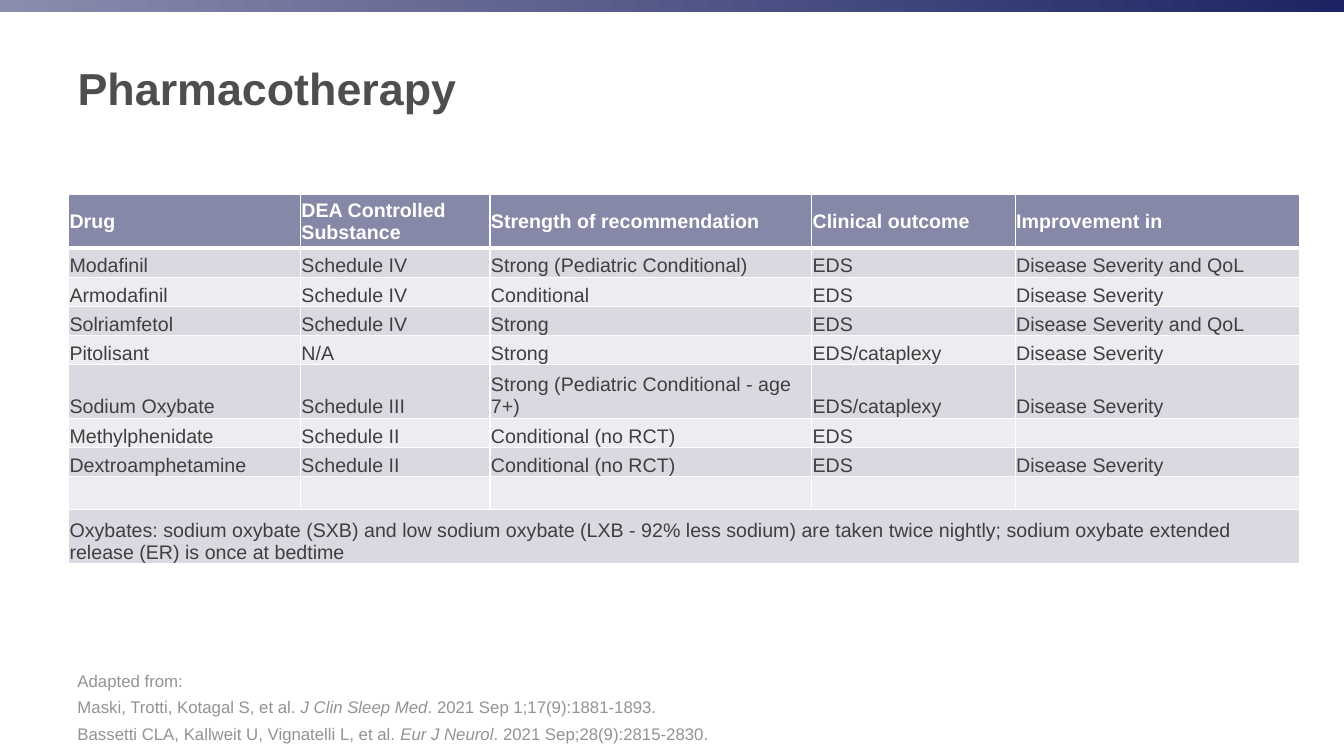
from lxml import etree
from pptx import Presentation
from pptx.dml.color import RGBColor
from pptx.enum.shapes import MSO_SHAPE
from pptx.enum.text import MSO_ANCHOR, PP_ALIGN
from pptx.oxml.ns import qn
from pptx.util import Inches, Pt

RECTANGLE = MSO_SHAPE.RECTANGLE
MIDDLE, BOTTOM = MSO_ANCHOR.MIDDLE, MSO_ANCHOR.BOTTOM
LEFT = PP_ALIGN.LEFT

WIDTH, HEIGHT = Inches(13.33), Inches(7.5)
MARGIN, TEXT_WIDTH = Inches(0.67), Inches(11.75)
COLUMN_WIDTHS = [2.3, 1.88, 3.19, 2.02, 2.82]
SINGLE, DOUBLE, SPACER = 0.29, 0.53, 0.33
ROW_HEIGHTS = [DOUBLE] + [SINGLE] * 4 + [DOUBLE] + [SINGLE] * 2 + [SPACER, DOUBLE]
BODY_SIZE = 14

DRUGS = [
    ["Drug", "DEA Controlled Substance", "Strength of recommendation",
     "Clinical outcome", "Improvement in"],
    ["Modafinil", "Schedule IV", "Strong (Pediatric Conditional)", "EDS",
     "Disease Severity and QoL"],
    ["Armodafinil", "Schedule IV", "Conditional", "EDS", "Disease Severity"],
    ["Solriamfetol", "Schedule IV", "Strong", "EDS", "Disease Severity and QoL"],
    ["Pitolisant", "N/A", "Strong", "EDS/cataplexy", "Disease Severity"],
    ["Sodium Oxybate", "Schedule III", "Strong (Pediatric Conditional - age 7+)",
     "EDS/cataplexy", "Disease Severity"],
    ["Methylphenidate", "Schedule II", "Conditional (no RCT)", "EDS", ""],
    ["Dextroamphetamine", "Schedule II", "Conditional (no RCT)", "EDS",
     "Disease Severity"],
    [""] * 5,
    ["Oxybates: sodium oxybate (SXB) and low sodium oxybate (LXB - 92% less sodium) "
     "are taken twice nightly; sodium oxybate extended release (ER) is once at bedtime",
     "", "", "", ""],
]
CITATIONS = [
    ["Adapted from:"],
    ["Maski, Trotti, Kotagal S, et al. ", "J Clin Sleep Med",
     ". 2021 Sep 1;17(9):1881-1893."],
    ["Bassetti CLA, Kallweit U, Vignatelli L, et al. ", "Eur J Neurol",
     ". 2021 Sep;28(9):2815-2830."],
]


def color(value):
    return RGBColor.from_string(value)


def add_text(paragraph, text, size, ink, **styles):
    run = paragraph.add_run()
    run.text = text
    run.font.color.rgb = color(ink)
    for key, value in {"name": "Arial", "size": Pt(size), **styles}.items():
        setattr(run.font, key, value)


deck = Presentation()
deck.slide_width, deck.slide_height = WIDTH, HEIGHT
slide = deck.slides.add_slide(deck.slide_layouts[5])

band = slide.shapes.add_shape(RECTANGLE, 0, 0, WIDTH, Inches(0.12))
band.shadow.inherit = False
band.line.fill.background()
band.fill.gradient()
band.fill.gradient_angle = 0
for stop, shade in zip(band.fill.gradient_stops, ["898CAD", "1C2463"]):
    stop.color.rgb = color(shade)

heading = slide.shapes.title
heading.left, heading.top = MARGIN, Inches(0.22)
heading.width, heading.height = TEXT_WIDTH, Inches(1.3)
heading.text_frame.vertical_anchor = MIDDLE
heading_line = heading.text_frame.paragraphs[0]
heading_line.alignment = LEFT
add_text(heading_line, "Pharmacotherapy", 32, "4D4E4D", bold=True)

drug_table = slide.shapes.add_table(
    len(DRUGS), len(COLUMN_WIDTHS), Inches(0.68), Inches(1.93),
    Inches(sum(COLUMN_WIDTHS)), Inches(sum(ROW_HEIGHTS))).table
for column, width in zip(drug_table.columns, COLUMN_WIDTHS):
    column.width = Inches(width)
for row, height in zip(drug_table.rows, ROW_HEIGHTS):
    row.height = Inches(height)

last_row = len(DRUGS) - 1
for r, entries in enumerate(DRUGS):
    header = r == 0
    shade = "8589A7" if header else ["EDEDF1", "D9DAE1"][r % 2]
    borders = {"lnL": 1, "lnR": 1, "lnT": 3 if r == 1 else 1, "lnB": 3 if header else 1}
    for c, entry in enumerate(entries):
        cell = drug_table.cell(r, c)
        cell.margin_left = cell.margin_right = cell.margin_top = Inches(0.01)
        cell.margin_bottom = 0
        cell.vertical_anchor = MIDDLE if header else BOTTOM
        properties = cell._tc.get_or_add_tcPr()
        for side, points in borders.items():
            border = etree.SubElement(properties, qn("a:" + side), w=str(Pt(points)))
            paint = etree.SubElement(border, qn("a:solidFill"))
            etree.SubElement(paint, qn("a:srgbClr"), val="FFFFFF")
        cell.fill.solid()
        cell.fill.fore_color.rgb = color(shade)
        line = cell.text_frame.paragraphs[0]
        if entry:
            add_text(line, entry, BODY_SIZE, "FFFFFF" if header else "3F3F3F", bold=header)
        else:
            etree.SubElement(line._p, qn("a:endParaRPr"), sz=str(BODY_SIZE * 100))
drug_table.cell(last_row, 0).merge(drug_table.cell(last_row, len(COLUMN_WIDTHS) - 1))

sources = slide.shapes.add_textbox(MARGIN, Inches(6.95), TEXT_WIDTH, Inches(0.48)).text_frame
sources.word_wrap = True
sources.vertical_anchor = BOTTOM
for i, citation in enumerate(CITATIONS):
    line = sources.add_paragraph() if i else sources.paragraphs[0]
    line.line_spacing = 0.9
    line.space_after = Pt(6)
    for part, text in enumerate(citation):
        add_text(line, text, 12, "939393", italic=part == 1)

deck.save("out.pptx")
